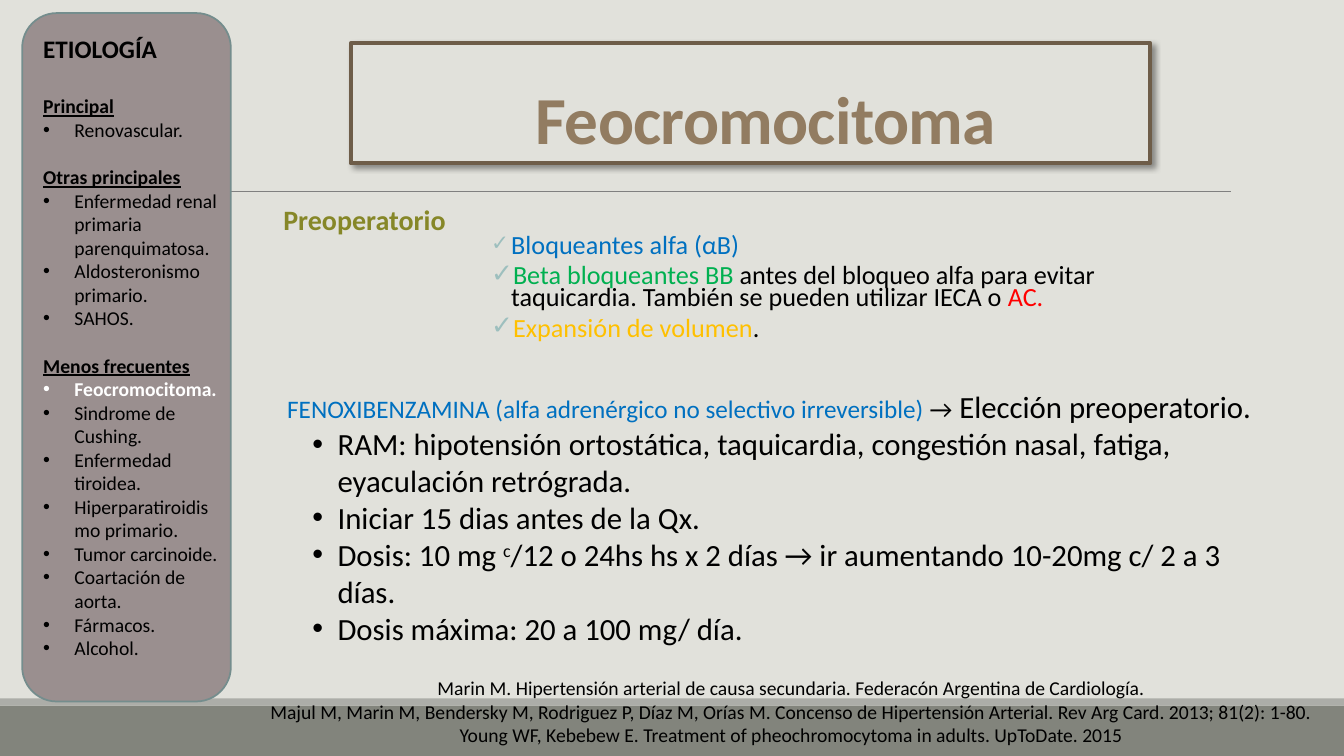
from lxml import etree
from pptx import Presentation
from pptx.dml.color import RGBColor
from pptx.enum.shapes import MSO_CONNECTOR, MSO_SHAPE
from pptx.enum.text import MSO_ANCHOR, PP_ALIGN
from pptx.oxml import parse_xml
from pptx.oxml.ns import qn
from pptx.util import Inches, Pt

RECT, ROUNDED = MSO_SHAPE.RECTANGLE, MSO_SHAPE.ROUNDED_RECTANGLE
STRAIGHT = MSO_CONNECTOR.STRAIGHT
LEFT, CENTER = PP_ALIGN.LEFT, PP_ALIGN.CENTER
BOTTOM = MSO_ANCHOR.BOTTOM
FONT = "Calibri"
COLORS = {
    "paper": "E1E1DB", "footer": "82847C", "stripe": "ACADA8", "rule": "808080",
    "frame": "6E5D49", "title": "927C61", "panel": "9A8F8F", "edge": "748D8D",
    "black": "000000", "white": "FFFFFF", "olive": "868728", "check": "9DBFBE",
    "blue": "0070C0", "green": "00B050", "red": "FF0000", "amber": "FFC000",
}

TITLE = "Feocromocitoma"
CURRENT = "Feocromocitoma."
ETIOLOGY = [
    ("Principal", ["Renovascular."]),
    ("Otras principales", ["Enfermedad renal primaria parenquimatosa.",
                           "Aldosteronismo primario.", "SAHOS."]),
    ("Menos frecuentes", [CURRENT, "Sindrome de Cushing.", "Enfermedad tiroidea.",
                          "Hiperparatiroidismo primario.", "Tumor carcinoide.",
                          "Coartación de aorta.", "Fármacos.", "Alcohol."]),
]
# Each line is a list of (text, format) spans.
CHECKLIST = [
    [("Bloqueantes alfa (αB)", {"color": "blue"})],
    [("Beta bloqueantes BB", {"color": "green"}),
     (" antes del bloqueo alfa para evitar taquicardia. "
      "También se pueden utilizar IECA o ", {}),
     ("AC.", {"color": "red"})],
    [("Expansión de volumen", {"color": "amber"}), (".", {})],
]
DRUG = [
    ("FENOXIBENZAMINA (alfa adrenérgico no selectivo irreversible) ",
     {"size": 18, "color": "blue"}),
    ("→", {"size": 18}),
    (" Elección preoperatorio.", {}),
]
DRUG_NOTES = [
    [("RAM: hipotensión ortostática, taquicardia, congestión nasal, fatiga, "
      "eyaculación retrógrada.", {})],
    [("Iniciar 15 dias antes de la Qx.", {})],
    [("Dosis: 10 mg ", {}), ("c", {"raised": True}),
     ("/12 o 24hs hs x 2 días → ir aumentando 10-20mg c/ 2 a 3 días.", {})],
    [("Dosis máxima: 20 a 100 mg/ día.", {})],
]
REFERENCES = [
    "Marin M. Hipertensión arterial de causa secundaria. "
    "Federacón Argentina de Cardiología.",
    "Majul M, Marin M, Bendersky M, Rodriguez P, Díaz M, Orías M. Concenso de "
    "Hipertensión Arterial. Rev Arg Card. 2013; 81(2): 1-80.",
    "Young WF, Kebebew E. Treatment of pheochromocytoma in adults. UpToDate. 2015",
]
SHADOW = (
    '<a:effectLst xmlns:a="http://schemas.openxmlformats.org/drawingml/2006/main">'
    '<a:outerShdw blurRad="50800" dist="38100" dir="2700000" algn="tl" rotWithShape="0">'
    '<a:srgbClr val="000000"><a:alpha val="40000"/></a:srgbClr>'
    '</a:outerShdw></a:effectLst>'
)


def rgb(name):
    return RGBColor.from_string(COLORS[name])


def add_panel(page, kind, place, fill, line=None, width=1):
    panel = page.shapes.add_shape(kind, *map(Inches, place))
    panel.shadow.inherit = False
    panel.fill.solid()
    panel.fill.fore_color.rgb = rgb(fill)
    if line:
        panel.line.color.rgb = rgb(line)
        panel.line.width = Pt(width)
    else:
        panel.line.fill.background()
    return panel


def add_text_frame(page, place, side=0.1):
    frame = page.shapes.add_textbox(*map(Inches, place)).text_frame
    frame.word_wrap = True
    frame.margin_left = frame.margin_right = Inches(side)
    return frame


def set_bullet(para, mark, color=None, percent=None):
    props = para._p.get_or_add_pPr()
    if color:
        holder = etree.SubElement(props, qn("a:buClr"))
        etree.SubElement(holder, qn("a:srgbClr"), val=COLORS[color])
    if percent:
        etree.SubElement(props, qn("a:buSzPct"), val=str(percent * 1000))
    etree.SubElement(props, qn("a:buFont"), typeface="Arial")
    etree.SubElement(props, qn("a:buChar"), char=mark)


def add_span(para, text, size=18, color="black", bold=False, underline=False,
             raised=False, tracking=None):
    span = para.add_run()
    span.text = text
    font = span.font
    font.name, font.size, font.bold, font.underline = FONT, Pt(size), bold, underline
    font.color.rgb = rgb(color)
    if raised:
        font._element.set("baseline", "30000")
    if tracking:
        font._element.set("spc", str(int(tracking * 100)))


def add_line(frame, content, align=LEFT, before=0, after=0, spacing=1.0, margin=0,
             hang=0, bullet=None, bullet_color=None, bullet_percent=None, **style):
    """Append a paragraph; content is a string or a list of (text, format) spans."""
    first = frame.paragraphs[0]
    para = frame.add_paragraph() if first.runs else first
    para.alignment, para.line_spacing = align, spacing
    para.space_before, para.space_after = Pt(before), Pt(after)
    props = para._p.get_or_add_pPr()
    props.set("marL", str(Inches(margin)))
    props.set("indent", str(Inches(-hang)))
    if bullet:
        set_bullet(para, bullet, bullet_color, bullet_percent)
    spans = [(content, {})] if isinstance(content, str) else content
    for text, extra in spans:
        add_span(para, text, **{**style, **extra})


def add_backdrop(page):
    page.background.fill.solid()
    page.background.fill.fore_color.rgb = rgb("paper")
    add_panel(page, RECT, (0, 7, 13.33, 0.5), "footer")
    add_panel(page, RECT, (0, 6.93, 13.33, 0.07), "stripe")
    rule = page.shapes.add_connector(STRAIGHT, *map(Inches, (1.31, 1.9, 12.21, 1.9)))
    rule.line.color.rgb = rgb("rule")
    rule.line.width = Pt(0.5)
    etree.SubElement(rule._element.spPr, qn("a:effectLst"))


def add_title(page):
    box = add_panel(page, RECT, (3.48, 0.43, 7.93, 1.19), "paper", "frame", 3)
    props = box._element.spPr
    props.replace(props.find(qn("a:effectLst")), parse_xml(SHADOW))
    frame = box.text_frame
    frame.vertical_anchor = BOTTOM
    frame.margin_left = Inches(0.4)
    add_line(frame, TITLE, align=CENTER, spacing=0.85, size=48, color="title",
             bold=True, tracking=-0.5)


def add_sidebar(page):
    add_panel(page, ROUNDED, (0.22, 0.13, 2.07, 6.83), "panel", "edge", 1.25)
    frame = add_text_frame(page, (0.33, 0.28, 1.95, 7.07))
    add_line(frame, "ETIOLOGÍA", bold=True)
    for index, (heading, causes) in enumerate(ETIOLOGY):
        add_line(frame, heading, before=17 if index else 22, size=14, bold=True,
                 underline=True)
        for cause in causes:
            current = cause == CURRENT
            add_line(frame, cause, margin=0.31, hang=0.31, bullet="•", size=14,
                     bold=current, color="white" if current else "black")


def add_content(page):
    heading = add_text_frame(page, (2.71, 2, 9.44, 4.43), side=0)
    add_line(heading, "Preoperatorio", margin=0.1, spacing=0.9, size=20,
             color="olive", bold=True)

    checks = add_text_frame(page, (4.65, 2.3, 7.15, 1.25), side=0)
    for index, spans in enumerate(CHECKLIST):
        add_line(checks, spans, before=2 if index else 0, after=4, spacing=0.7,
                 margin=0.42, hang=0.2, bullet="✓", bullet_color="check",
                 bullet_percent=100 if index else 82, size=18.7)

    drug = add_text_frame(page, (2.75, 3.8, 10.09, 3))
    add_line(drug, DRUG, size=22)
    for spans in DRUG_NOTES:
        add_line(drug, spans, margin=0.5, hang=0.25, bullet="•", size=22)

    sources = add_text_frame(page, (2.4, 6.66, 10.9, 1.28))
    for reference in REFERENCES:
        add_line(sources, reference, align=CENTER, size=14)


def main():
    deck = Presentation()
    deck.slide_width, deck.slide_height = Inches(13.33), Inches(7.5)
    page = deck.slides.add_slide(deck.slide_layouts[6])
    for add_part in (add_backdrop, add_title, add_sidebar, add_content):
        add_part(page)
    deck.save("out.pptx")


if __name__ == "__main__":
    main()
